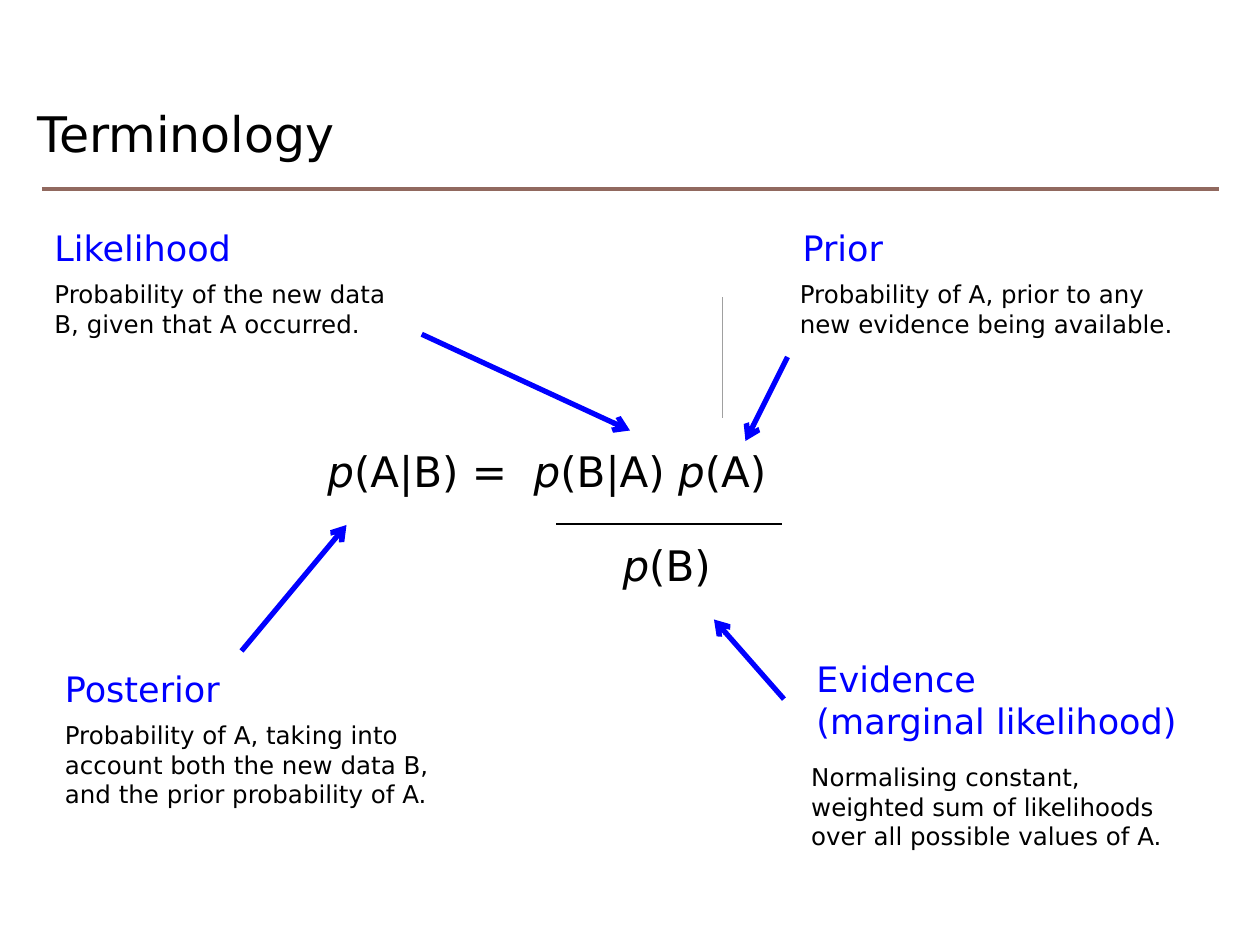
from dataclasses import dataclass

from lxml.etree import SubElement
from pptx import Presentation
from pptx.dml.color import RGBColor
from pptx.enum.shapes import MSO_CONNECTOR
from pptx.enum.text import MSO_ANCHOR, PP_ALIGN
from pptx.oxml.ns import qn
from pptx.util import Pt


@dataclass(frozen=True)
class Theme:
    font: str = "DejaVu Sans"
    ink: RGBColor = RGBColor(0x00, 0x00, 0x00)
    accent: RGBColor = RGBColor(0x00, 0x00, 0xFF)
    rule: RGBColor = RGBColor(0x91, 0x69, 0x5F)
    faint: RGBColor = RGBColor(0xA0, 0xA0, 0xA0)
    title: int = 28
    formula: int = 24
    heading: int = 20
    body: int = 14


THEME = Theme()


def apply_format(target, values):
    for name, value in values.items():
        setattr(target, name, value)


def add_text(slide, box, lines, size, color=THEME.ink, wrap=True, align=PP_ALIGN.LEFT):
    frame = slide.shapes.add_textbox(*map(Pt, box)).text_frame
    apply_format(frame, {"word_wrap": wrap, "vertical_anchor": MSO_ANCHOR.TOP})
    for index, line in enumerate(lines):
        paragraph = frame.paragraphs[0] if index == 0 else frame.add_paragraph()
        paragraph.alignment = align
        for text, italic, spacing in line:
            run = paragraph.add_run()
            run.text = text
            apply_format(run.font, {"name": THEME.font, "size": Pt(size), "italic": italic})
            run.font.color.rgb = color
            if spacing:
                run._r.get_or_add_rPr().set("spc", str(spacing))


def plain(*lines):
    return [[(line, False, 0)] for line in lines]


def add_line(slide, start, end, color, width, arrow=False):
    line = slide.shapes.add_connector(MSO_CONNECTOR.STRAIGHT, *map(Pt, start + end))
    line.line.color.rgb = color
    line.line.width = Pt(width)
    if arrow:
        SubElement(line.line._get_or_add_ln(), qn("a:tailEnd"), type="arrow")
    SubElement(line._element.spPr, qn("a:effectLst"))


def add_title(slide, box, title):
    left, top, width, height = box
    rule_top = top + 52.5
    add_line(slide, (left + 9.5, rule_top), (left + 682, rule_top), THEME.rule, 1.75)
    add_text(slide, box, plain(title), THEME.title)


def add_formula(slide, box):
    left, top, width, height = box
    bar_top = top + 48.5
    numerator = [
        ("p", True, 0), ("(A|B) ", False, 0), ("=", True, 0), (" ", True, 763),
        ("p", True, 0), ("(B|A) ", False, 0), ("p", True, 0), ("(A)", False, 0),
    ]
    denominator = [("p", True, 0), ("(B)", False, 0)]
    add_line(slide, (left + 138, bar_top), (left + 267, bar_top), THEME.ink, 1.5)
    add_text(slide, (left, top, width, 37), [numerator], THEME.formula)
    add_text(slide, (left + 162, top + 54, 78, 37), [denominator], THEME.formula,
             align=PP_ALIGN.CENTER)
    add_line(slide, (left + 232.5, top - 81), (left + 232.5, top - 12), THEME.faint, 0.25)


def add_term(slide, heading_box, heading, body_box, body, arrow_start, arrow_end):
    add_text(slide, heading_box, plain(*heading), THEME.heading, THEME.accent, wrap=False)
    add_text(slide, body_box, plain(*body), THEME.body, wrap=len(body) == 1)
    add_line(slide, arrow_start, arrow_end, THEME.accent, 3, arrow=True)


TERMS = [
    ((24, 126, 116, 32), ["Likelihood"], (24, 156, 217, 41),
     ["Probability of the new data B, given that A occurred."],
     (241, 191), (360, 246)),
    ((451.5, 126, 62, 32), ["Prior"], (450, 156, 227.5, 41),
     ["Probability of A, prior to any", "new evidence being available."],
     (450, 204), (426, 252)),
    ((30, 378, 104.5, 32), ["Posterior"], (30, 408, 225.5, 58),
     ["Probability of A, taking into", "account both the new data B,",
      "and the prior probability of A."],
     (138, 372), (198, 300)),
    ((459.5, 372, 224.5, 55.5), ["Evidence", "(marginal likelihood)"], (456.5, 432, 222, 58),
     ["Normalising constant, weighted sum of likelihoods over all possible values of A."],
     (448, 399.5), (408, 354)),
]


def main():
    presentation = Presentation()
    apply_format(presentation, {"slide_width": Pt(720), "slide_height": Pt(540)})
    slide = presentation.slides.add_slide(presentation.slide_layouts[6])
    add_title(slide, (14.5, 55.5, 648, 90), "Terminology")
    add_formula(slide, (180, 251, 300, 91))
    for term in TERMS:
        add_term(slide, *term)
    presentation.save("out.pptx")


if __name__ == "__main__":
    main()
